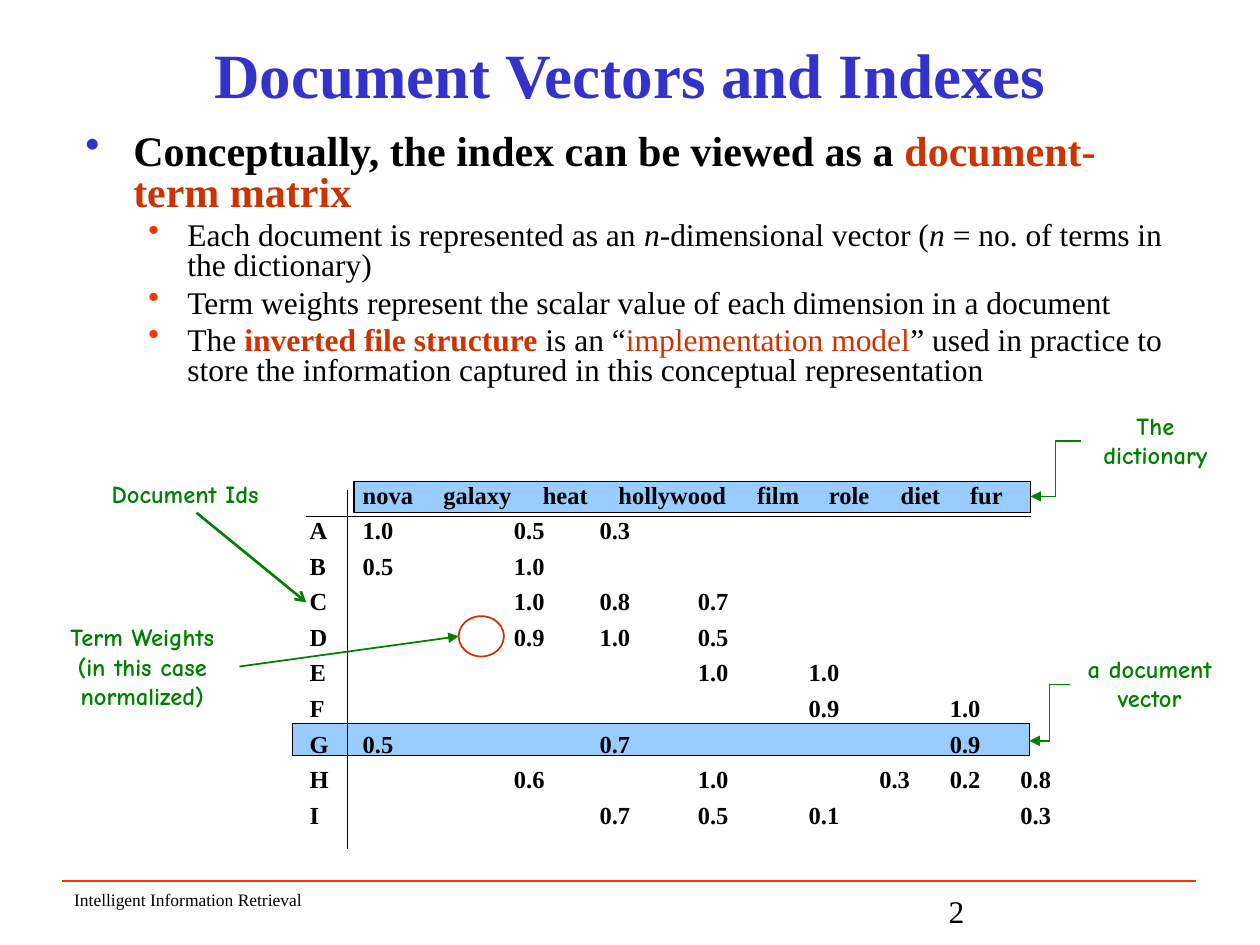
from lxml import etree
from pptx import Presentation
from pptx.dml.color import RGBColor
from pptx.enum.shapes import MSO_CONNECTOR, MSO_SHAPE
from pptx.enum.text import MSO_ANCHOR, PP_ALIGN
from pptx.oxml.ns import qn
from pptx.util import Inches, Pt

STRAIGHT, ELBOW = MSO_CONNECTOR.STRAIGHT, MSO_CONNECTOR.ELBOW
RECT, OVAL = MSO_SHAPE.RECTANGLE, MSO_SHAPE.OVAL
LEFT, CENTER = PP_ALIGN.LEFT, PP_ALIGN.CENTER
TOP, MIDDLE = MSO_ANCHOR.TOP, MSO_ANCHOR.MIDDLE

BLACK = RGBColor(0x00, 0x00, 0x00)
BLUE = RGBColor(0x33, 0x33, 0xCC)
RUST = RGBColor(0xCC, 0x33, 0x00)
ORANGE = RGBColor(0xFF, 0x33, 0x00)
GREEN = RGBColor(0x00, 0x80, 0x00)
SKY = RGBColor(0x99, 0xCC, 0xFF)

SERIF, HAND = "Times New Roman", "Comic Neue"

# The slide is a grid of 100 columns by 75 rows.
COLS, ROWS = 100, 75
UNIT = Inches(10) // COLS

# Matrix: tab stops in grid columns from the left edge of its text.
MATRIX_LEFT, MATRIX_TOP, ROW_STEP = 23.6, 37.6, 2.75
TERMS = ["nova", "galaxy", "heat", "hollywood", "film", "role", "diet", "fur"]
TERM_STOPS = [4.2, 10.6, 18.5, 24.5, 35.5, 41.2, 46.9, 52.4]
WEIGHT_STOPS = [4.2, 16.2, 23, 30.8, 39.6, 45.2, 50.8, 56.4]
WEIGHTS = {
    "A": {"nova": "1.0", "galaxy": "0.5", "heat": "0.3"},
    "B": {"nova": "0.5", "galaxy": "1.0"},
    "C": {"galaxy": "1.0", "heat": "0.8", "hollywood": "0.7"},
    "D": {"galaxy": "0.9", "heat": "1.0", "hollywood": "0.5"},
    "E": {"hollywood": "1.0", "film": "1.0"},
    "F": {"film": "0.9", "diet": "1.0"},
    "G": {"nova": "0.5", "heat": "0.7", "diet": "0.9"},
    "H": {"galaxy": "0.6", "hollywood": "1.0", "role": "0.3", "diet": "0.2",
          "fur": "0.8"},
    "I": {"heat": "0.7", "hollywood": "0.5", "film": "0.1", "fur": "0.3"},
}

KEY = {"color": RUST}
ITALIC = {"italic": True}
HEADLINE = [("Conceptually, the index can be viewed as a ", {}),
            ("document-term matrix", KEY)]
POINTS = [
    [("Each document is represented as an ", {}), ("n", ITALIC),
     ("-dimensional vector (", {}), ("n", ITALIC),
     (" = no. of terms in the dictionary)", {})],
    [("Term weights represent the scalar value of each dimension in a document", {})],
    [("The ", {}), ("inverted file structure", {"color": RUST, "bold": True}),
     (" is an “", {}), ("implementation model", KEY),
     ("” used in practice to store the information captured in this "
      "conceptual representation", {})],
]


def grid(*lengths):
    return [round(n * UNIT) for n in lengths]


def add_box(slide, *at, anchor=TOP):
    """Add an empty text box and return its text frame."""
    tf = slide.shapes.add_textbox(*grid(*at)).text_frame
    tf.word_wrap = True
    tf.vertical_anchor = anchor
    return tf


def new_paragraph(tf):
    first = tf.paragraphs[0]
    return tf.add_paragraph() if first.runs else first


def add_run(p, text, size=14, font=SERIF, color=BLACK, bold=False, italic=False):
    r = p.add_run()
    r.text = text
    r.font.size, r.font.name = Pt(size), font
    r.font.bold, r.font.italic = bold, italic
    r.font.color.rgb = color


def add_text(slide, at, *lines, align=LEFT, anchor=TOP, **style):
    tf = add_box(slide, *at, anchor=anchor)
    for line in lines:
        p = new_paragraph(tf)
        p.alignment = align
        add_run(p, line, **style)


def add_note(slide, at, *lines):
    add_text(slide, at, *lines, align=CENTER, font=HAND, color=GREEN, bold=True)


def add_bullet(tf, runs, level, indent, hang, color, gap, **style):
    p = new_paragraph(tf)
    p.level, p.line_spacing, p.space_before = level, 0.8, Pt(gap)
    pPr = p._p.get_or_add_pPr()
    pPr.set("marL", str(Inches(indent)))
    pPr.set("indent", str(-Inches(hang)))
    clr = etree.SubElement(pPr, qn("a:buClr"))
    etree.SubElement(clr, qn("a:srgbClr"), val=str(color))
    etree.SubElement(pPr, qn("a:buChar"), char="•")
    for text, changes in runs:
        add_run(p, text, **{**style, **changes})


def add_tabbed_row(tf, label, cells):
    """Add a line whose cells, pairs of tab stop and text, follow the label."""
    p = new_paragraph(tf)
    p.space_before = Pt(3.5)
    tabs = etree.SubElement(p._p.get_or_add_pPr(), qn("a:tabLst"))
    for stop, _ in cells:
        etree.SubElement(tabs, qn("a:tab"), pos=str(grid(stop)[0]), algn="l")
    add_run(p, "\t".join([label] + [text for _, text in cells]), bold=True)


def add_outline(slide, kind, at, line, width, fill=None):
    sp = slide.shapes.add_shape(kind, *grid(*at))
    sp.shadow.inherit = False
    if fill is None:
        sp.fill.background()
    else:
        sp.fill.solid()
        sp.fill.fore_color.rgb = fill
    sp.line.color.rgb, sp.line.width = line, Pt(width)


def add_line(slide, start, end, color=BLACK, width=0.75, kind=STRAIGHT, head=None):
    cxn = slide.shapes.add_connector(kind, *grid(*start, *end))
    cxn.line.color.rgb, cxn.line.width = color, Pt(width)
    if head:
        etree.SubElement(cxn.line._get_or_add_ln(), qn("a:tailEnd"), type=head)
    etree.SubElement(cxn._element.spPr, qn("a:effectLst"))


def add_matrix(slide):
    band_top = MATRIX_TOP + 0.6
    vector_top = band_top + (1 + list(WEIGHTS).index("G")) * ROW_STEP
    add_outline(slide, RECT, (28.1, band_top, 53.7, 2.5), BLACK, 0.75, SKY)
    add_outline(slide, RECT, (23.2, vector_top, 58.5, 2.5), BLACK, 0.75, SKY)
    tf = add_box(slide, MATRIX_LEFT, MATRIX_TOP, 67.2, 30.3)
    add_tabbed_row(tf, "", list(zip(TERM_STOPS, TERMS)))
    for doc, weights in WEIGHTS.items():
        add_tabbed_row(tf, doc, [(stop, weights[term])
                                 for stop, term in zip(WEIGHT_STOPS, TERMS)
                                 if term in weights])
    add_line(slide, (24.3, 41), (81.8, 41))
    add_line(slide, (27.6, 38.9), (27.6, 67.4))


def add_notes(slide):
    add_note(slide, (85.8, 32.1, 11.8, 5.7), "The dictionary")
    add_line(slide, (85.8, 35), (81.8, 39.4), GREEN, 0.75, ELBOW, "triangle")
    add_note(slide, (7.2, 37.5, 15, 3.3), "Document Ids")
    add_line(slide, (15.6, 40.7), (24.3, 47.8), GREEN, 1.5, head="arrow")
    add_note(slide, (84.9, 51.4, 12.7, 5.7), "a document", "vector")
    add_line(slide, (84.9, 54.3), (81.7, 58.8), GREEN, 0.75, ELBOW, "triangle")
    add_note(slide, (3.6, 48.9, 15.4, 8), "Term Weights", "(in this case", "normalized)")
    add_outline(slide, OVAL, (36.4, 48.9, 3.6, 3.2), RUST, 1)
    add_line(slide, (19, 52.9), (36.4, 50.5), GREEN, 1, head="triangle")


def main():
    prs = Presentation()
    prs.slide_width, prs.slide_height = grid(COLS, ROWS)
    slide = prs.slides.add_slide(prs.slide_layouts[6])

    add_line(slide, (4.9, 69.9), (94.9, 69.9), ORANGE, 1)
    add_text(slide, (4.9, 70.1, 37.5, 2.5), "Intelligent Information Retrieval", size=10)
    add_text(slide, (74.3, 70.3, 20.8, 2.5), "2", size=18)
    add_text(slide, (7.5, 2.5, 85, 6.7), "Document Vectors and Indexes",
             align=CENTER, anchor=MIDDLE, size=36, color=BLUE, bold=True)

    body = add_box(slide, 5.8, 10.2, 88.3, 21.9)
    add_bullet(body, HEADLINE, 0, 0.38, 0.38, BLUE, 5, size=24, bold=True)
    for point in POINTS:
        add_bullet(body, point, 1, 0.81, 0.31, ORANGE, 4, size=18)

    add_matrix(slide)
    add_notes(slide)
    prs.save("out.pptx")


if __name__ == "__main__":
    main()
